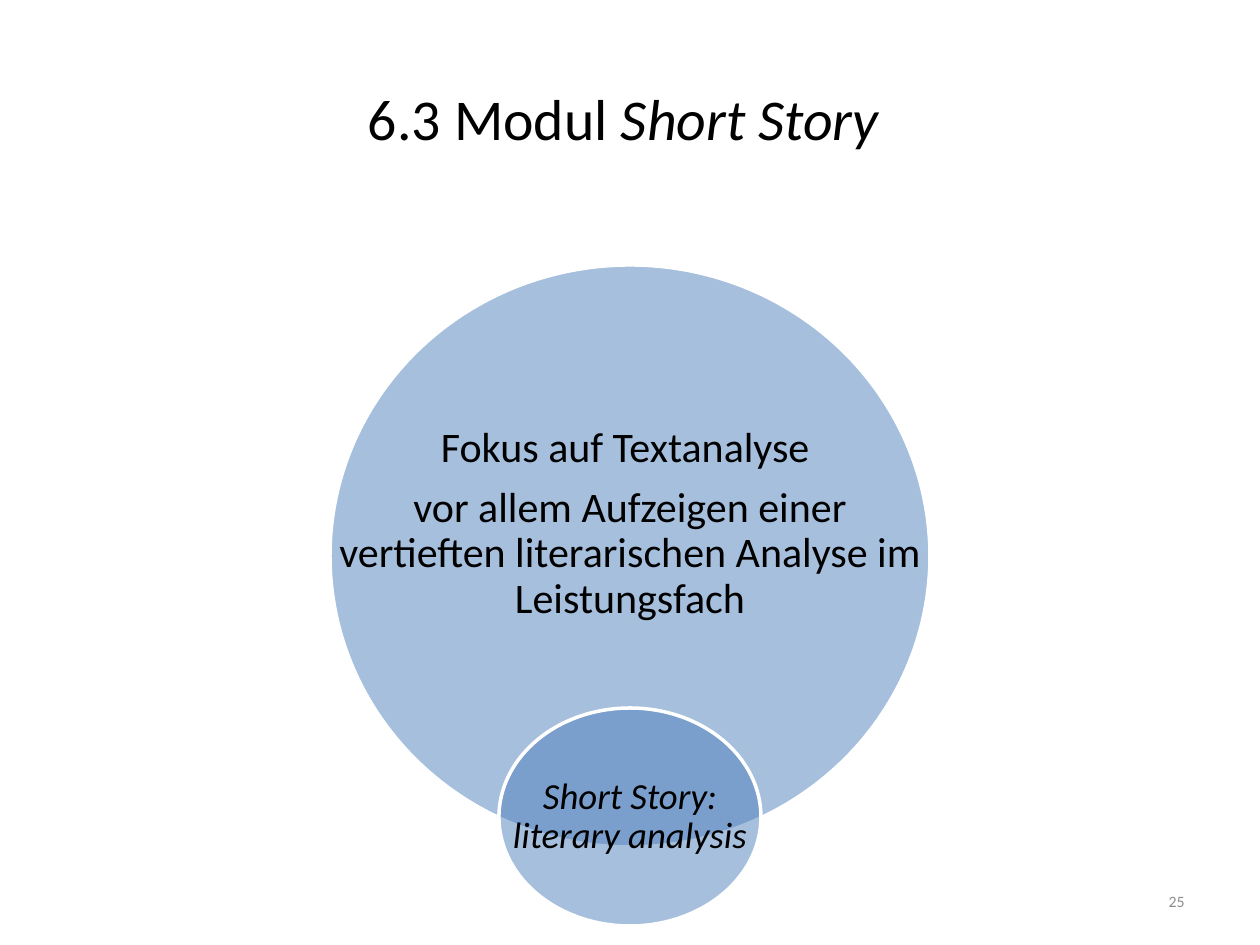
from lxml.etree import SubElement
from pptx import Presentation
from pptx.dml.color import RGBColor
from pptx.enum.shapes import MSO_SHAPE
from pptx.enum.text import MSO_ANCHOR, PP_ALIGN
from pptx.oxml.ns import qn
from pptx.util import Emu, Inches, Pt

PX_PER_INCH = 126
INSET = 4


def px(length):
    return Emu(round(length * 914400 / PX_PER_INCH))


def rgb(hex_color):
    return RGBColor.from_string(hex_color)


def place(part, box):
    part.left, part.top, part.width, part.height = map(px, box)


def style_run(run, size, color="000000", italic=None):
    run.font.name = "Calibri"
    run.font.size = Pt(size)
    run.font.color.rgb = rgb(color)
    run.font.italic = italic


def add_title(slide, box, parts):
    """Fill the title from (text, italic) parts."""
    title = slide.shapes.title
    place(title, box)
    title.text_frame.vertical_anchor = MSO_ANCHOR.MIDDLE
    paragraph = title.text_frame.paragraphs[0]
    paragraph.alignment = PP_ALIGN.CENTER
    for text, italic in parts:
        run = paragraph.add_run()
        run.text = text
        style_run(run, 33, italic=italic)


def add_page_number(slide, box, number):
    frame = slide.shapes.add_textbox(*map(px, box)).text_frame
    frame.word_wrap = True
    frame.vertical_anchor = MSO_ANCHOR.MIDDLE
    frame.text = number
    frame.paragraphs[0].alignment = PP_ALIGN.RIGHT
    style_run(frame.paragraphs[0].runs[0], 9, "8C8C8C")


def add_circle(slide, box, text, size, italic=None, lift=0):
    """Draw a half-transparent circle with its label raised by lift."""
    circle = slide.shapes.add_shape(MSO_SHAPE.OVAL, *map(px, box))
    circle.shadow.inherit = False
    circle.fill.solid()
    circle.fill.fore_color.rgb = rgb("4F81BD")
    color = circle.fill._xPr.find(".//" + qn("a:srgbClr"))
    SubElement(color, qn("a:alpha")).set("val", "50000")
    circle.line.color.rgb = rgb("FFFFFF")
    circle.line.width = Pt(2)

    frame = slide.shapes.add_textbox(*map(px, box)).text_frame
    frame.word_wrap = True
    frame.vertical_anchor = MSO_ANCHOR.MIDDLE
    frame.margin_left = frame.margin_right = frame.margin_top = px(INSET)
    frame.margin_bottom = px(INSET + 2 * lift)
    frame.text = text
    for paragraph in frame.paragraphs:
        paragraph.alignment = PP_ALIGN.CENTER
        paragraph.line_spacing = 0.9
        paragraph.space_after = Pt(8.5)
        style_run(paragraph.runs[0], size, italic=italic)


def main():
    presentation = Presentation()
    presentation.slide_width = Inches(10)
    presentation.slide_height = Inches(7.5)
    slide = presentation.slides.add_slide(presentation.slide_layouts[5])

    add_title(slide, (63, 38, 1134, 158),
              [("6.3 Modul ", None), ("Short Story ", True)])
    add_page_number(slide, (903, 876, 294, 50), "25")
    add_circle(slide, (330, 265, 600, 582),
               "Fokus auf Textanalyse \nvor allem Aufzeigen einer vertieften "
               "literarischen Analyse im Leistungsfach", 24, lift=32)
    add_circle(slide, (499, 708, 262, 218),
               "Short Story: literary analysis", 21, italic=True)

    presentation.save("out.pptx")


if __name__ == "__main__":
    main()
